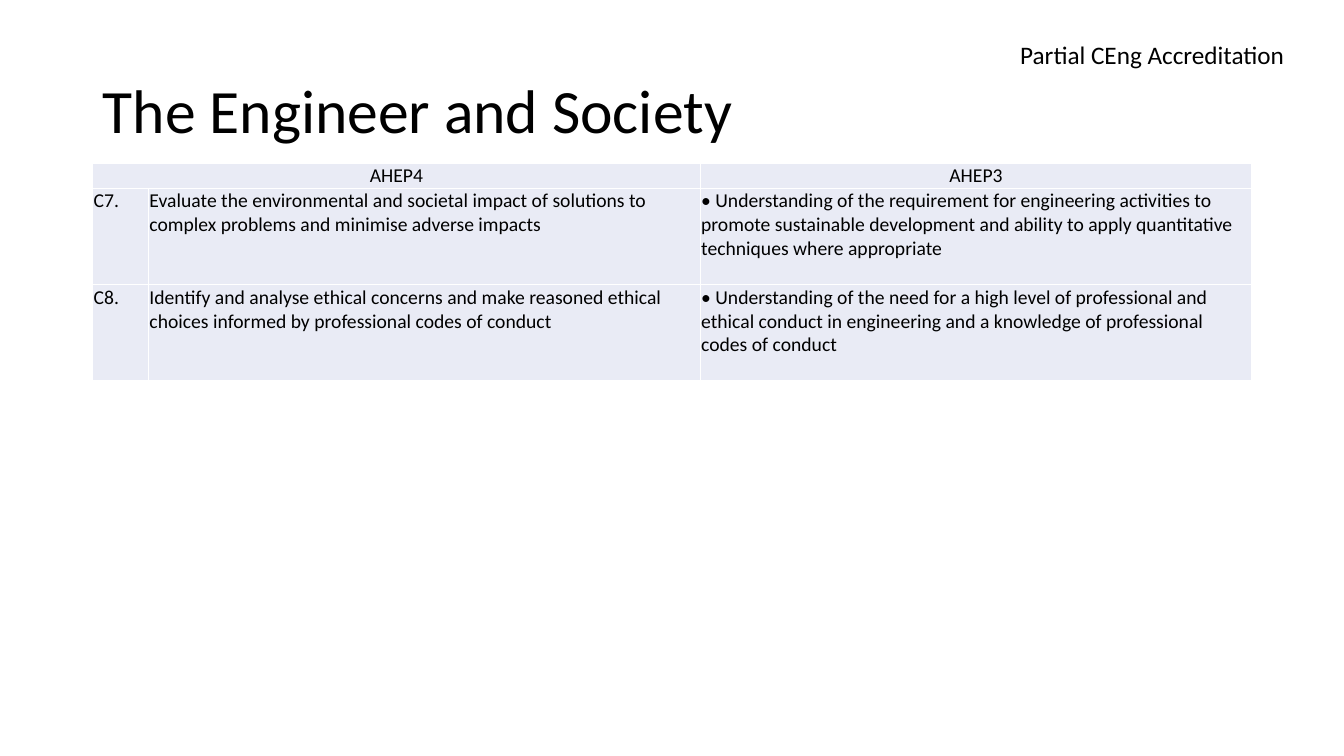
from lxml import etree
from pptx import Presentation
from pptx.dml.color import RGBColor
from pptx.enum.text import MSO_ANCHOR, PP_ALIGN
from pptx.oxml.ns import qn
from pptx.util import Inches, Pt

LEFT, CENTER = PP_ALIGN.LEFT, PP_ALIGN.CENTER
TOP, MIDDLE = MSO_ANCHOR.TOP, MSO_ANCHOR.MIDDLE
TITLE_ONLY = 5
FONT = "Calibri"
COLORS = {"text": "000000", "cell": "E9EBF5", "border": "FFFFFF"}

HEADERS = {0: "AHEP4", 2: "AHEP3"}
OUTCOMES = [
    ("C7.",
     "Evaluate the environmental and societal impact of solutions to complex "
     "problems and minimise adverse impacts",
     "• Understanding of the requirement for engineering activities to promote "
     "sustainable development and ability to apply quantitative techniques "
     "where appropriate"),
    ("C8.",
     "Identify and analyse ethical concerns and make reasoned ethical choices "
     "informed by professional codes of conduct",
     "• Understanding of the need for a high level of professional and ethical "
     "conduct in engineering and a knowledge of professional codes of conduct"),
]


class SlideBuilder:
    def __init__(self, prs):
        self.width, self.height = prs.slide_width, prs.slide_height
        self.slide = prs.slides.add_slide(prs.slide_layouts[TITLE_ONLY])

    def x(self, percent):
        return round(self.width * percent / 100)

    def y(self, percent):
        return round(self.height * percent / 100)

    def box(self, left, top, width, height):
        return self.x(left), self.y(top), self.x(width), self.y(height)

    def add_text(self, tf, text, size, align=LEFT):
        tf.word_wrap = True
        p = tf.paragraphs[0]
        p.alignment = align
        r = p.add_run()
        r.text = text
        r.font.name = FONT
        r.font.size = Pt(size)
        r.font.color.rgb = RGBColor.from_string(COLORS["text"])
        return p

    def title(self, text, box, size):
        sp = self.slide.shapes.title
        sp.left, sp.top, sp.width, sp.height = self.box(*box)
        sp.text_frame.vertical_anchor = MIDDLE
        self.add_text(sp.text_frame, text, size).line_spacing = 0.9

    def label(self, text, box, size):
        sp = self.slide.shapes.add_textbox(*self.box(*box))
        self.add_text(sp.text_frame, text, size)

    def style_cell(self, cell):
        cell.margin_left = cell.margin_right = cell.margin_top = Inches(0.01)
        cell.margin_bottom = 0
        cell.vertical_anchor = TOP
        tc_pr = cell._tc.get_or_add_tcPr()
        for side in ("a:lnL", "a:lnR", "a:lnT", "a:lnB"):
            ln = etree.SubElement(tc_pr, qn(side), w=str(Pt(1)))
            fill = etree.SubElement(ln, qn("a:solidFill"))
            etree.SubElement(fill, qn("a:srgbClr"), val=COLORS["border"])
        cell.fill.solid()
        cell.fill.fore_color.rgb = RGBColor.from_string(COLORS["cell"])

    def table(self, headers, rows, left, top, col_widths, row_heights, size):
        box = self.box(left, top, sum(col_widths), sum(row_heights))
        table = self.slide.shapes.add_table(
            len(row_heights), len(col_widths), *box).table
        for col, width in zip(table.columns, col_widths):
            col.width = self.x(width)
        for row, height in zip(table.rows, row_heights):
            row.height = self.y(height)
        for cell in table.iter_cells():
            self.style_cell(cell)
        table.cell(0, 0).merge(table.cell(0, 1))
        for i, text in headers.items():
            p = self.add_text(table.cell(0, i).text_frame, text, size, CENTER)
            p.font.bold = p.runs[0].font.bold = False
        for j, row in enumerate(rows, 1):
            for i, text in enumerate(row):
                self.add_text(table.cell(j, i).text_frame, text, size)


def main():
    prs = Presentation()
    prs.slide_width, prs.slide_height = Inches(13.33), Inches(7.5)
    s = SlideBuilder(prs)
    s.title("The Engineer and Society", (6.9, 5.33, 86.25, 19.33), 44)
    s.table(HEADERS, OUTCOMES, 6.9, 21.6,
            [4.15, 41.05, 41.05], [3.25, 12.75, 12.75], 14)
    s.label("Partial CEng Accreditation", (75.17, 4.53, 23.33, 5.33), 18)
    prs.save("out.pptx")


if __name__ == "__main__":
    main()
